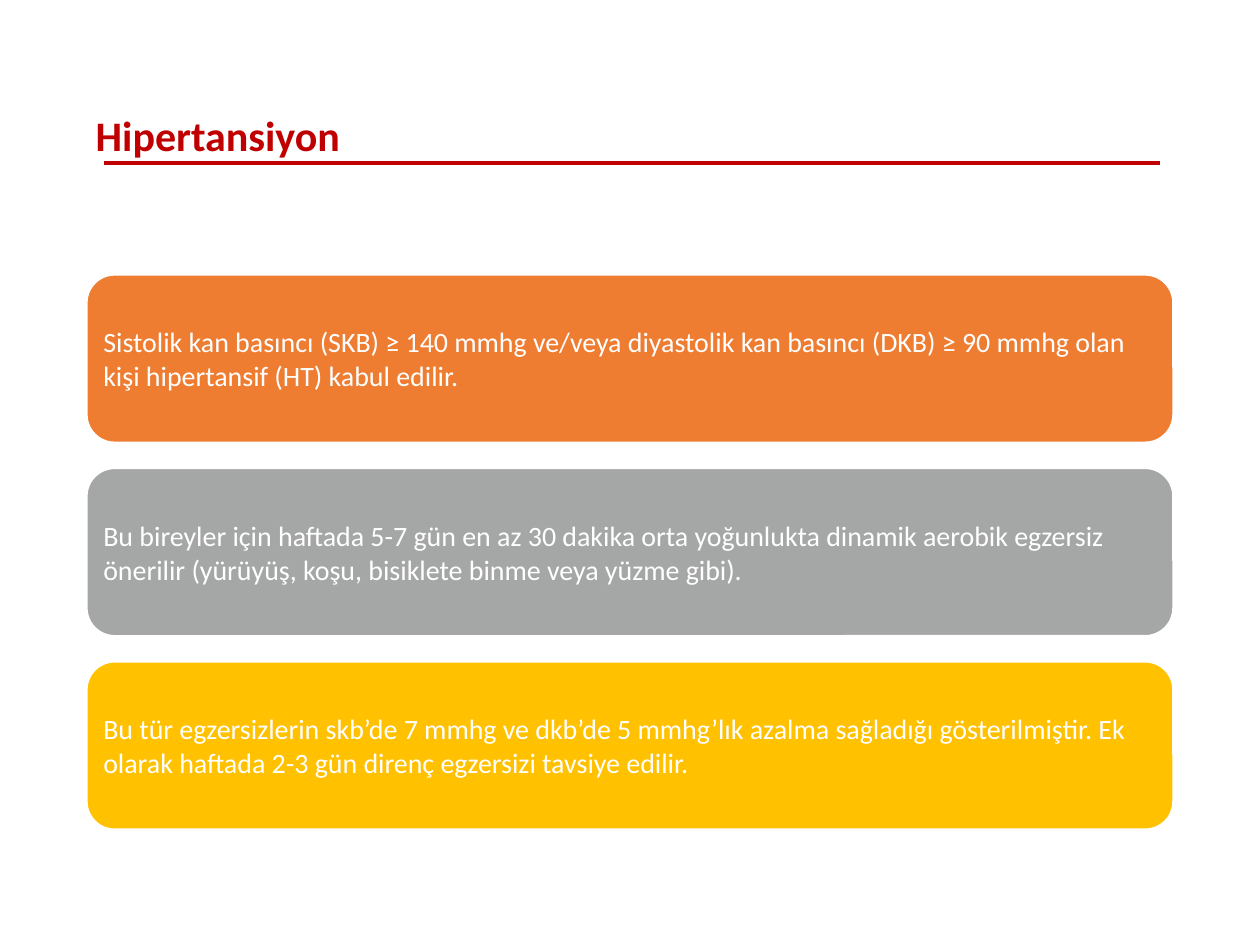
from lxml import etree
from pptx import Presentation
from pptx.dml.color import RGBColor
from pptx.enum import shapes, text
from pptx.oxml.ns import qn
from pptx.util import Cm, Pt

COLOURS = {
    "red": "C00000",
    "orange": "EE7C31",
    "grey": "A5A6A6",
    "yellow": "FFC100",
    "white": "FFFFFF",
}
FONT = "Calibri"

CARDS = [
    ("orange", "Sistolik kan basıncı (SKB) ≥ 140 mmhg ve/veya diyastolik kan basıncı "
               "(DKB) ≥ 90 mmhg olan kişi hipertansif (HT) kabul edilir."),
    ("grey", "Bu bireyler için haftada 5-7 gün en az 30 dakika orta yoğunlukta dinamik "
             "aerobik egzersiz önerilir (yürüyüş, koşu, bisiklete binme veya yüzme gibi)."),
    ("yellow", "Bu tür egzersizlerin skb’de 7 mmhg ve dkb’de 5 mmhg’lık azalma sağladığı "
               "gösterilmiştir. Ek olarak haftada 2-3 gün direnç egzersizi tavsiye edilir."),
]
CARD_LEFT, CARD_TOP, CARD_WIDTH, CARD_HEIGHT = 1.75, 5.54, 21.9, 3.38
CARD_PITCH = 3.9


def colour(name):
    return RGBColor.from_string(COLOURS[name])


def set_text(box, wording, size, colour_name, margins, bold=False):
    frame = box.text_frame
    frame.word_wrap = True
    frame.auto_size = text.MSO_AUTO_SIZE.NONE
    frame.vertical_anchor = text.MSO_ANCHOR.MIDDLE
    frame.margin_left = frame.margin_right = Cm(margins[0])
    frame.margin_top = frame.margin_bottom = Cm(margins[1])
    frame.text = wording
    para = frame.paragraphs[0]
    para.alignment = text.PP_ALIGN.LEFT
    para.font.name = FONT
    para.font.size = Pt(size)
    para.font.bold = bold
    para.font.color.rgb = colour(colour_name)
    return para


def add_title(page, wording):
    title = page.shapes.title
    title.left, title.top = Cm(1.73), Cm(1.68)
    title.width, title.height = Cm(21.9), Cm(2.18)
    para = set_text(title, wording, 24, "red", (0.2, 0.1), bold=True)
    para.line_spacing = 0.9


def add_card(page, top, fill, wording):
    card = page.shapes.add_shape(
        shapes.MSO_SHAPE.ROUNDED_RECTANGLE,
        Cm(CARD_LEFT), Cm(top), Cm(CARD_WIDTH), Cm(CARD_HEIGHT))
    card.shadow.inherit = False
    card.fill.solid()
    card.fill.fore_color.rgb = colour(fill)
    card.line.color.rgb = colour("white")
    card.line.width = Pt(1)
    set_text(card, wording, 16, "white", (0.17, 0.17))


def add_rule(page, left, right, height):
    rule = page.shapes.add_connector(
        shapes.MSO_CONNECTOR.STRAIGHT, Cm(left), Cm(height), Cm(right), Cm(height))
    rule.line.color.rgb = colour("red")
    rule.line.width = Pt(2.25)
    etree.SubElement(rule._element.spPr, qn("a:effectLst"))


def main():
    deck = Presentation()
    deck.slide_width, deck.slide_height = Cm(25.4), Cm(19.05)
    page = deck.slides.add_slide(deck.slide_layouts[5])

    # Heading
    add_title(page, "Hipertansiyon")

    # Stacked cards
    for index, (fill, wording) in enumerate(CARDS):
        add_card(page, CARD_TOP + index * CARD_PITCH, fill, wording)

    # Line under the heading
    add_rule(page, 2.09, 23.39, 3.28)

    deck.save("out.pptx")


if __name__ == "__main__":
    main()
